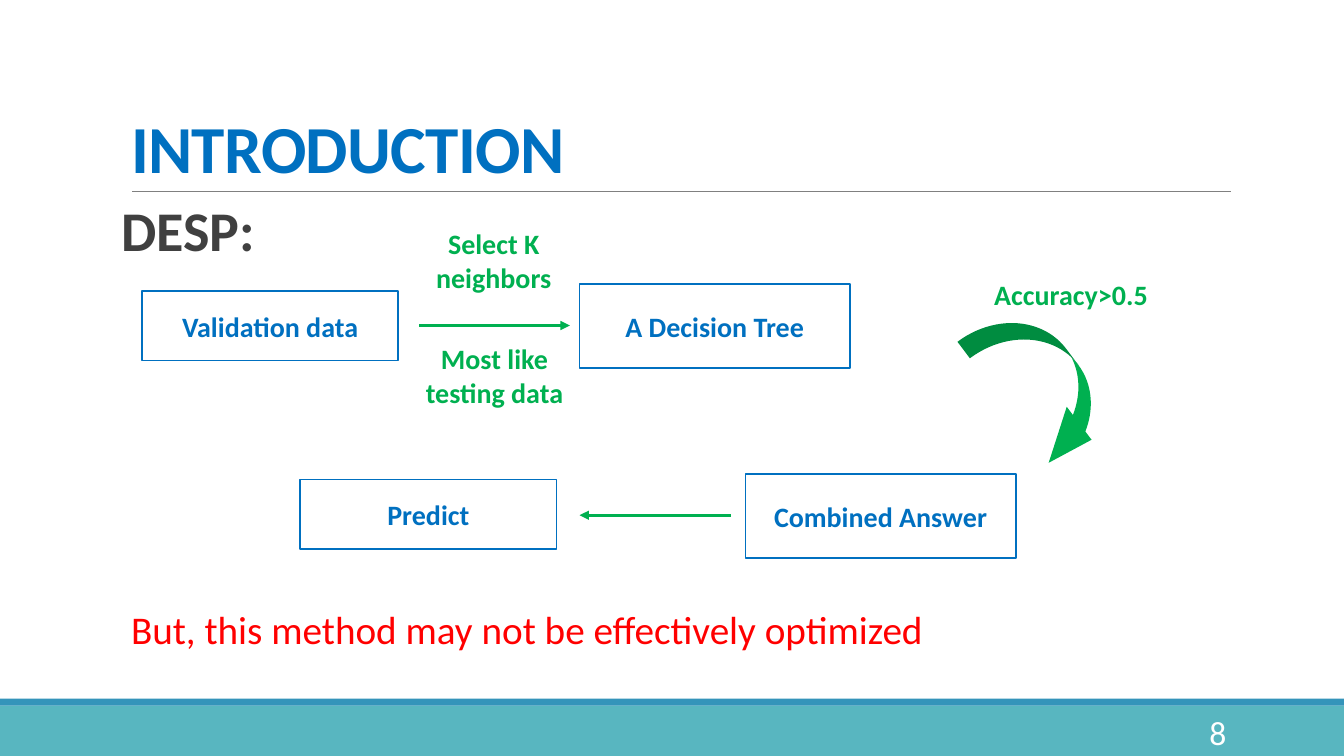
from pptx import Presentation
from pptx.dml.color import RGBColor
from pptx.enum.shapes import MSO_CONNECTOR, MSO_SHAPE
from pptx.enum.text import MSO_ANCHOR, PP_ALIGN
from pptx.oxml.ns import qn
from pptx.util import Pt
from lxml import etree

LEFT, MID, RIGHT = PP_ALIGN.LEFT, PP_ALIGN.CENTER, PP_ALIGN.RIGHT
TOP, CORE, BASE = MSO_ANCHOR.TOP, MSO_ANCHOR.MIDDLE, MSO_ANCHOR.BOTTOM
RECT, CURVE = MSO_SHAPE.RECTANGLE, MSO_SHAPE.CURVED_LEFT_ARROW
LINE = MSO_CONNECTOR.STRAIGHT

BLUE, GREEN, GRAY = "0070C0", "00B050", "808080"
WIDE, HIGH = 960, 540

# Content: left, top, width, height in points
TITLE = "INTRODUCTION"
BANDS = [((0, 504, WIDE, 36), "58B6C0"), ((0, 499, WIDE, 5), "3494BA")]
BOXES = [
    ("Validation data", (101.5, 208, 183, 49.5)),
    ("A Decision Tree", (414, 203, 193, 60)),
    ("Combined Answer", (532.5, 338.5, 193, 60)),
    ("Predict", (214.5, 342.5, 183, 49.5)),
]
LABELS = [
    ("Select K neighbors", (291.5, 158.5, 122.5, 69)),
    ("Most like\ntesting data", (292, 240.5, 122.5, 55.5)),
    ("Accuracy>0.5", (692.5, 194.5, 145, 31.5)),
]
ARROWS = [(299.5, 407, 232.5), (522, 414, 368)]
BEND = (715, 214, 59, 123)
NOTE = "But, this method may not be effectively optimized"

deck = Presentation()
deck.slide_width, deck.slide_height = Pt(WIDE), Pt(HIGH)
slide = deck.slides.add_slide(deck.slide_layouts[5])
shapes = slide.shapes


def color(code):
    return RGBColor.from_string(code)


def write(shape, text, size, code, bold=False, align=LEFT, anchor=TOP):
    frame = shape.text_frame
    frame.text = text
    frame.word_wrap = True
    frame.vertical_anchor = anchor
    for para in frame.paragraphs:
        para.alignment = align
        for run in para.runs:
            font = run.font
            font.name, font.size, font.bold = "Calibri", Pt(size), bold
            font.color.rgb = color(code)
    return frame


def label(text, area, *style):
    return write(shapes.add_textbox(*map(Pt, area)), text, *style)


def block(kind, area, fill=None, edge=None):
    shape = shapes.add_shape(kind, *map(Pt, area))
    shape.shadow.inherit = False
    if fill:
        shape.fill.solid()
        shape.fill.fore_color.rgb = color(fill)
    else:
        shape.fill.background()
    if edge:
        shape.line.color.rgb = color(edge)
        shape.line.width = Pt(1.25)
    else:
        shape.line.fill.background()
    return shape


def rule(start, end, y, code, width, head=False):
    line = shapes.add_connector(LINE, Pt(start), Pt(y), Pt(end), Pt(y))
    line.line.color.rgb = color(code)
    line.line.width = Pt(width)
    if head:
        pen = line.line._get_or_add_ln()
        etree.SubElement(pen, qn("a:tailEnd"), type="triangle")
    etree.SubElement(line._element.spPr, qn("a:effectLst"))


# Footer bands and title rule
for area, fill in BANDS:
    block(RECT, area, fill)
rule(94.5, 879, 136.5, GRAY, 0.5)

# Title and heading
title = shapes.title
title.left, title.top, title.width, title.height = map(Pt, (86.5, 22.5, 792, 114.5))
frame = write(title, TITLE, 48, BLUE, True, LEFT, BASE)
para = frame.paragraphs[0]
para.line_spacing = 0.85
para.runs[0].font._element.set("spc", "-50")

frame = label("DESP:", (78.5, 145.5, 792, 49.5), 40, "404040", True)
frame.margin_left, frame.margin_right = Pt(8), 0
para = frame.paragraphs[0]
para.line_spacing = 0.8
para.space_before, para.space_after = Pt(12), Pt(2)

# Flow chart
for text, area in BOXES:
    write(block(RECT, area, edge=BLUE), text, 20, BLUE, True, MID, CORE)
for text, area in LABELS:
    label(text, area, 20, GREEN, True, MID)
for start, end, y in ARROWS:
    rule(start, end, y, GREEN, 2.25, True)
bend = block(CURVE, BEND, GREEN)
bend.rotation = 323
for i, value in enumerate((0.25, 0.5, 0.583)):
    bend.adjustments[i] = value

# Remark and page number
label(NOTE, (86.5, 428.5, 687.5, 41), 28, "FF0000")
label("8", (780, 508.5, 103, 29), 24, "FFFFFF", False, RIGHT, CORE)

deck.save("out.pptx")
